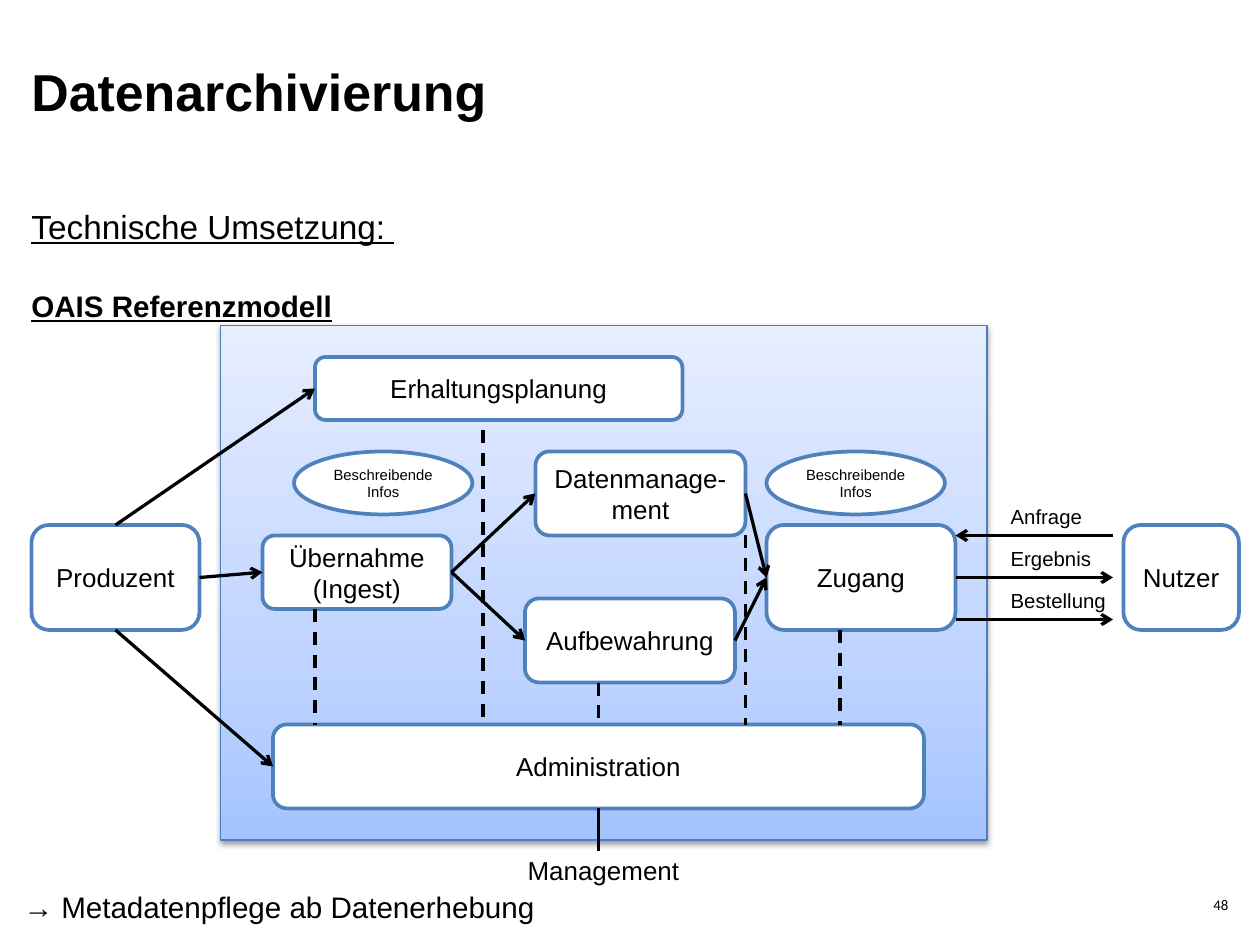
import pptx
import pptx.dml.color
import pptx.enum.dml
import pptx.enum.shapes
import pptx.enum.text
import pptx.oxml
import pptx.oxml.ns
import pptx.util
import copy
from lxml import etree

Cm = pptx.util.Cm
Pt = pptx.util.Pt
RGB = pptx.dml.color.RGBColor
SHAPE = pptx.enum.shapes.MSO_SHAPE
ALIGN = pptx.enum.text.PP_ALIGN
ANCHOR = pptx.enum.text.MSO_ANCHOR
qn = pptx.oxml.ns.qn

BLACK = RGB(0x00, 0x00, 0x00)
WHITE = RGB(0xFF, 0xFF, 0xFF)
BLUE = RGB(0x4F, 0x81, 0xBD)
FRAME_LINE = RGB(0x4B, 0x7E, 0xBC)
FRAME_STOPS = [(0, RGB(0xA4, 0xC4, 0xFF)), (0.35, RGB(0xBF, 0xD4, 0xFF)),
               (1, RGB(0xE6, 0xEE, 0xFF))]
TOP, LEFT, BOTTOM, RIGHT = range(4)


def write(p, text, size=14, font="Arial", color=BLACK, bold=False,
          underline=False, align=ALIGN.LEFT, spacing=None, before=None):
    p.alignment = align
    if spacing:
        p.line_spacing = Pt(spacing)
    if before:
        p.space_before = Pt(before)
    r = p.add_run()
    r.text = text
    r.font.size, r.font.name, r.font.color.rgb = Pt(size), font, color
    r.font.bold, r.font.underline = bold, underline


class Diagram:
    """Style and current slide; all lengths are centimetres."""

    def __init__(self, slide):
        self.shapes = slide.shapes

    def frame(self, x, y, w, h):
        sp = self.shapes.add_shape(SHAPE.RECTANGLE, Cm(x), Cm(y), Cm(w), Cm(h))
        sp.fill.gradient()
        sp.fill.gradient_angle = 90
        gs = sp.element.spPr.find(qn("a:gradFill")).find(qn("a:gsLst"))
        gs.append(copy.deepcopy(gs[-1]))
        for stop, (position, color) in zip(sp.fill.gradient_stops, FRAME_STOPS):
            stop.position, stop.color.rgb = position, color
        sp.line.color.rgb, sp.line.width = FRAME_LINE, Pt(0.75)
        # Soft shadow below the frame
        sp.shadow.inherit = False
        shadow = etree.SubElement(
            sp.element.spPr.find(qn("a:effectLst")), qn("a:outerShdw"),
            blurRad=str(Pt(3.1)), dist=str(Pt(1.6)), dir="5400000", rotWithShape="0")
        color = etree.SubElement(shadow, qn("a:srgbClr"), val=str(BLACK))
        etree.SubElement(color, qn("a:alpha"), val="38000")

    def box(self, text, x, y, w, h, kind=SHAPE.ROUNDED_RECTANGLE, size=14):
        sp = self.shapes.add_shape(kind, Cm(x), Cm(y), Cm(w), Cm(h))
        sp.shadow.inherit = False
        sp.fill.solid()
        sp.fill.fore_color.rgb = WHITE
        sp.line.color.rgb, sp.line.width = BLUE, Pt(2)
        tf = sp.text_frame
        tf.word_wrap, tf.vertical_anchor = True, ANCHOR.MIDDLE
        write(tf.paragraphs[0], text, size=size, align=ALIGN.CENTER)
        return sp

    def text(self, text, x, y, w, h, inset=True, anchor=ANCHOR.TOP, **style):
        tf = self.shapes.add_textbox(Cm(x), Cm(y), Cm(w), Cm(h)).text_frame
        tf.word_wrap, tf.vertical_anchor = True, anchor
        if not inset:
            tf.margin_left = tf.margin_right = tf.margin_top = tf.margin_bottom = 0
        write(tf.paragraphs[0], text, **style)
        return tf

    def line(self, start, end, arrow=False, dashed=False):
        """Each end is a point (x, y) or a joint (shape, side)."""
        joints = [hasattr(e[0], "shape_id") for e in (start, end)]
        a, b = [(0, 0) if joint else e for joint, e in zip(joints, (start, end))]
        cn = self.shapes.add_connector(pptx.enum.shapes.MSO_CONNECTOR.STRAIGHT,
                                       Cm(a[0]), Cm(a[1]), Cm(b[0]), Cm(b[1]))
        if joints[0]:
            cn.begin_connect(*start)
        if joints[1]:
            cn.end_connect(*end)
        cn.line.color.rgb, cn.line.width = BLACK, Pt(1.75)
        if dashed:
            cn.line.dash_style = pptx.enum.dml.MSO_LINE.DASH
        if arrow:
            etree.SubElement(cn.element.spPr.find(qn("a:ln")), qn("a:tailEnd"),
                             type="arrow")
        etree.SubElement(cn.element.spPr, qn("a:effectLst"))


def main():
    prs = pptx.Presentation()
    prs.slide_width, prs.slide_height = Cm(24), Cm(18)
    d = Diagram(prs.slides.add_slide(prs.slide_layouts[6]))

    # Frame and headings
    d.frame(4.2, 6.2, 14.6, 9.8)
    d.text("Datenarchivierung", 0.6, 1.3, 17.2, 3, inset=False,
           size=28, bold=True, spacing=29)
    tf = d.text("Technische Umsetzung: ", 0.6, 3.94, 22.8, 2.3, inset=False,
                size=18, underline=True, spacing=21)
    write(tf.add_paragraph(), "OAIS Referenzmodell", size=16, bold=True,
          underline=True, spacing=21, before=21)
    d.text("48", 17.2, 17, 6.2, 0.4, inset=False, anchor=ANCHOR.BOTTOM,
           size=8, font="Calibri", align=ALIGN.RIGHT)

    # Functional units
    producer = d.box("Produzent", 0.6, 10, 3.2, 2)
    d.box("Nutzer", 21.4, 10, 2.2, 2)
    planning = d.box("Erhaltungsplanung", 6, 6.8, 7, 1.2)
    ingest = d.box("Übernahme (Ingest)", 5, 10.2, 3.6, 1.4)
    admin = d.box("Administration", 5.2, 13.8, 12.4, 1.6)
    data = d.box("Datenmanage-ment", 10.2, 8.6, 4, 1.6)
    storage = d.box("Aufbewahrung", 10, 11.4, 4, 1.6)
    access = d.box("Zugang", 14.6, 10, 3.6, 2)

    # Data flow
    for start, side, end in [(producer, TOP, planning), (producer, BOTTOM, admin),
                             (producer, RIGHT, ingest), (ingest, RIGHT, data),
                             (ingest, RIGHT, storage), (data, RIGHT, access),
                             (storage, RIGHT, access)]:
        d.line((start, side), (end, LEFT), arrow=True)

    # Descriptive information
    for x in (5.6, 14.6):
        d.box("Beschreibende Infos", x, 8.6, 3.4, 1.2, kind=SHAPE.OVAL, size=8)

    # Exchange with the user
    d.line((21.2, 10.2), (18.2, 10.2), arrow=True)
    d.line((access, RIGHT), (21.2, 11), arrow=True)
    d.line((18.2, 11.8), (21.2, 11.8), arrow=True)
    for i, label in enumerate(["Anfrage", "Ergebnis", "Bestellung"]):
        d.text(label, 19, 9.47 + 0.8 * i, 2.4, 0.74, size=11)

    # Management and links to administration
    d.text("Management", 9.8, 16.15, 3.4, 0.86)
    d.line((admin, BOTTOM), (11.4, 16.2))
    for x, y in [(6, 11.6), (16, 12), (9.2, 8.2), (14.2, 10.2)]:
        d.line((x, y), (x, 13.8), dashed=True)
    d.line((11.4, 13), (admin, TOP), dashed=True)

    # Conclusion
    d.text("→ Metadatenpflege ab Datenerhebung", 0.2, 16.8, 14.4, 0.94, size=16)
    prs.save("out.pptx")


if __name__ == "__main__":
    main()
